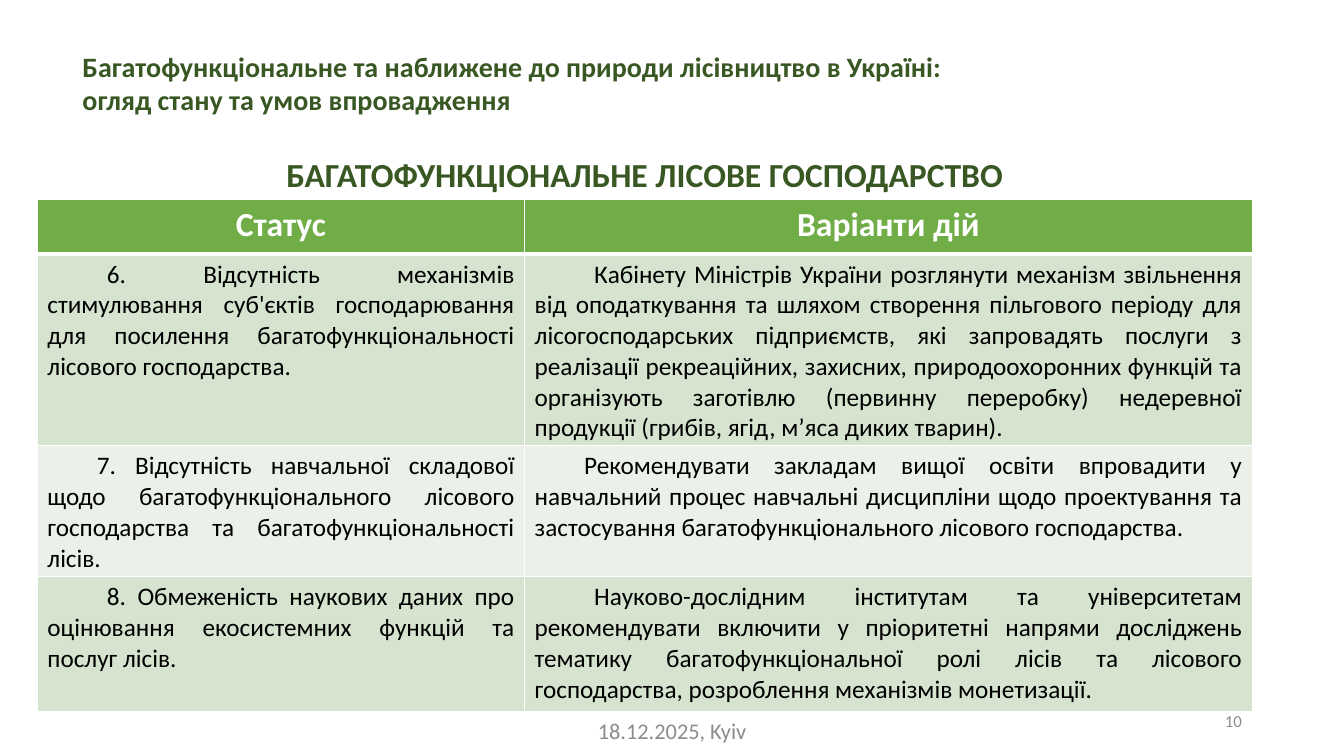
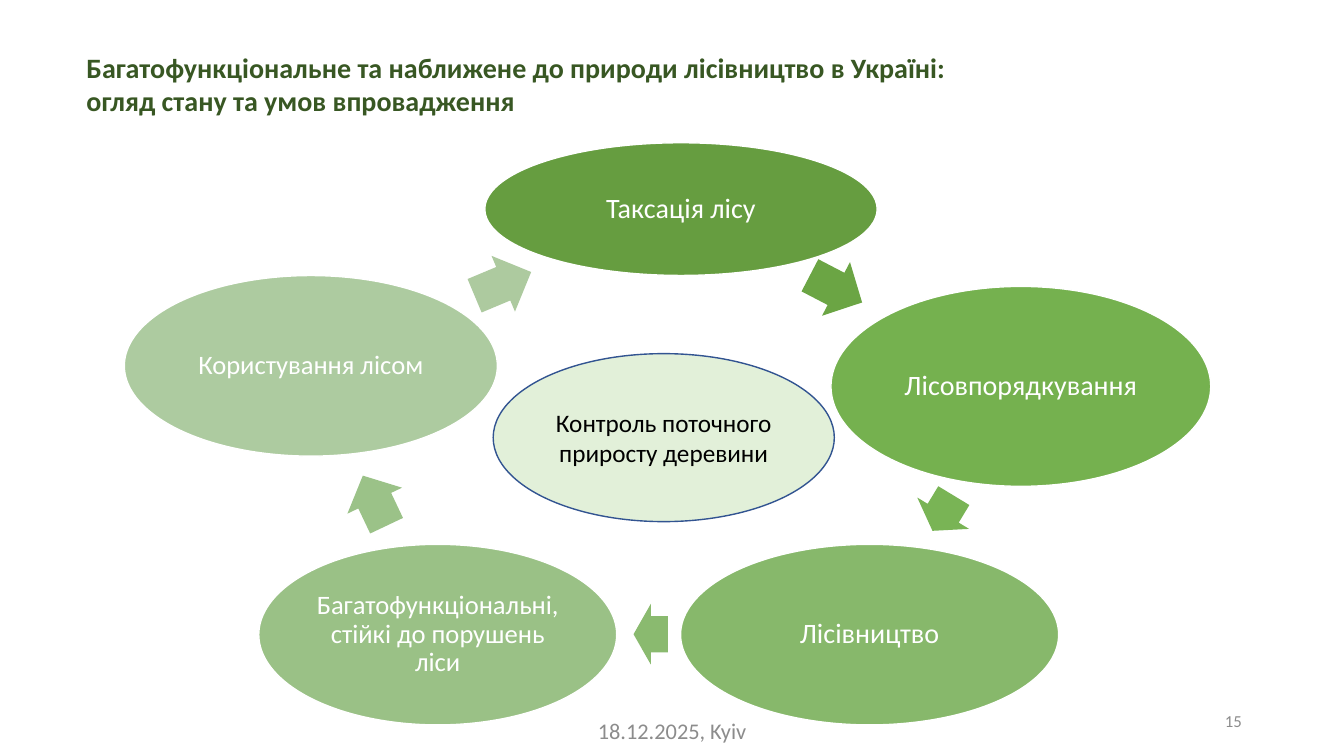
from lxml import etree
from pptx import Presentation
from pptx import util as u
from pptx.dml.color import RGBColor
from pptx.enum import shapes, text
from pptx.oxml import ns

FOREST = RGBColor(0x38, 0x57, 0x23)
LEAF = RGBColor(0x70, 0xAD, 0x47)
BAND_DARK = RGBColor(0xD5, 0xE3, 0xCF)
BAND_LIGHT = RGBColor(0xEB, 0xF1, 0xE9)
PALE = RGBColor(0xE2, 0xF0, 0xD9)
NAVY = RGBColor(0x32, 0x54, 0x91)
GREY = RGBColor(0x8C, 0x8C, 0x8C)
WHITE = RGBColor(0xFF, 0xFF, 0xFF)
BLACK = RGBColor(0, 0, 0)

SURVEY, SURVEY_ARROW = RGBColor(0x66, 0x9D, 0x40), RGBColor(0x6B, 0xA5, 0x44)
PLANNING, PLANNING_ARROW = RGBColor(0x75, 0xB1, 0x4F), RGBColor(0x79, 0xB4, 0x55)
FORESTRY, FORESTRY_ARROW = RGBColor(0x87, 0xB8, 0x6B), RGBColor(0x8A, 0xBA, 0x6F)
RESILIENT, RESILIENT_ARROW = RGBColor(0x9A, 0xC1, 0x86), RGBColor(0x9B, 0xC2, 0x88)
USE, USE_ARROW = RGBColor(0xAD, 0xCB, 0xA0), RGBColor(0xAD, 0xCA, 0x9F)

COLUMNS, ROWS = 160, 90
LEFT, CENTER = text.PP_ALIGN.LEFT, text.PP_ALIGN.CENTER
RIGHT, JUSTIFY = text.PP_ALIGN.RIGHT, text.PP_ALIGN.JUSTIFY
MIDDLE, TOP = text.MSO_ANCHOR.MIDDLE, text.MSO_ANCHOR.TOP

deck = Presentation()
deck.slide_width, deck.slide_height = u.Inches(13.33), u.Inches(7.5)


def grid(*lengths):
    cell = deck.slide_height / ROWS
    return [round(cell * length) for length in lengths]


def write(frame, words, size=18, color=BLACK, bold=False, align=LEFT,
          anchor=TOP, indent=0, spacing=None, inset=None):
    frame.word_wrap = True
    frame.vertical_anchor = anchor
    if inset is not None:
        frame.margin_left = frame.margin_right = u.Inches(inset)
        frame.margin_top = frame.margin_bottom = u.Inches(inset)
    paragraph = frame.paragraphs[0]
    paragraph.alignment = align
    paragraph.line_spacing = spacing
    if indent:
        paragraph._p.get_or_add_pPr().set("indent", str(u.Inches(indent)))
    run = paragraph.add_run()
    run.text = words
    run.font.name = "Calibri"
    run.font.size = u.Pt(size)
    run.font.bold = bold
    run.font.color.rgb = color


slides = []
for number, title_left, title_top in (("10", 8.64, 5.28), ("15", 9.12, 5.4)):
    slide = deck.slides.add_slide(deck.slide_layouts[6])
    slides.append(slide)
    title = slide.shapes.add_textbox(*grid(title_left, title_top, 111.12, 9.24))
    write(title.text_frame,
          "Багатофункціональне та наближене до природи лісівництво в Україні: "
          "огляд стану та умов впровадження",
          size=20, color=FOREST, bold=True)
    page = slide.shapes.add_textbox(*grid(113, 83.4, 36, 4.8))
    write(page.text_frame, number, size=12, color=GREY, align=RIGHT, anchor=MIDDLE)
    occasion = slide.shapes.add_textbox(*grid(53, 83.4, 54, 7.2))
    write(occasion.text_frame, "18.12.2025, Kyiv",
          size=16, color=GREY, align=CENTER, anchor=MIDDLE)

options_slide, cycle_slide = slides

heading = options_slide.shapes.add_textbox(*grid(5.28, 17.76, 142.92, 6))
write(heading.text_frame, "БАГАТОФУНКЦІОНАЛЬНЕ ЛІСОВЕ ГОСПОДАРСТВО",
      size=24, color=FOREST, bold=True, align=CENTER)

head = dict(size=24, color=WHITE, bold=True, align=CENTER)
wide = dict(align=JUSTIFY, indent=0.59)
narrow = dict(align=JUSTIFY, indent=0.49)
options = [
    (6.5, LEAF, head, "Статус", "Варіанти дій"),
    (22.7, BAND_DARK, wide,
     "6. Відсутність механізмів стимулювання суб'єктів господарювання для "
     "посилення багатофункціональності лісового господарства.",
     "Кабінету Міністрів України розглянути механізм звільнення від "
     "оподаткування та шляхом створення пільгового періоду для "
     "лісогосподарських підприємств, які запровадять послуги з реалізації "
     "рекреаційних, захисних, природоохоронних функцій та організують "
     "заготівлю (первинну переробку) недеревної продукції (грибів, ягід, "
     "м’яса диких тварин)."),
    (15.6, BAND_LIGHT, narrow,
     "7. Відсутність навчальної складової щодо багатофункціонального лісового "
     "господарства та багатофункціональності лісів.",
     "Рекомендувати закладам вищої освіти впровадити у навчальний процес "
     "навчальні дисципліни щодо проектування та застосування "
     "багатофункціонального лісового господарства."),
    (16.1, BAND_DARK, wide,
     "8. Обмеженість наукових даних про оцінювання екосистемних функцій та "
     "послуг лісів.",
     "Науково-дослідним інститутам та університетам рекомендувати включити у "
     "пріоритетні напрями досліджень тематику багатофункціональної ролі лісів "
     "та лісового господарства, розроблення механізмів монетизації."),
]
table = options_slide.shapes.add_table(
    len(options), 2, *grid(4.44, 23.76, 144.6, 60.9)).table
for column, width in zip(table.columns, grid(58, 86.6)):
    column.width = width
for row_index, (height, band, style, *entries) in enumerate(options):
    table.rows[row_index].height = grid(height)[0]
    for column_index, entry in enumerate(entries):
        cell = table.cell(row_index, column_index)
        for side in "LRTB":
            thick = (row_index, side) in ((0, "B"), (1, "T"))
            border = etree.SubElement(cell._tc.get_or_add_tcPr(), ns.qn("a:ln" + side),
                                      w=str(u.Pt(3 if thick else 1)))
            paint = etree.SubElement(border, ns.qn("a:solidFill"))
            etree.SubElement(paint, ns.qn("a:srgbClr"), val=str(WHITE))
        cell.fill.solid()
        cell.fill.fore_color.rgb = band
        write(cell.text_frame, entry, **style)

ELLIPSE, ARROW = shapes.MSO_SHAPE.OVAL, shapes.MSO_SHAPE.RIGHT_ARROW
stage = dict(color=WHITE, align=CENTER, anchor=MIDDLE, spacing=0.9, inset=0.03)
large, small = dict(stage, size=20), dict(stage, size=19)
core = dict(align=CENTER, anchor=MIDDLE)
stages = [
    ("Таксація лісу", (57.7, 17, 46.7, 15.8), SURVEY, WHITE, large),
    ("Лісовпорядкування", (98.9, 34.1, 45.2, 23.8), PLANNING, WHITE, large),
    ("Лісівництво", (81, 64.8, 45, 21.5), FORESTRY, WHITE, large),
    ("Багатофункціональні, стійкі до порушень ліси",
     (30.8, 64.8, 42.6, 21.5), RESILIENT, WHITE, small),
    ("Користування лісом", (14.8, 32.8, 44.4, 21.5), USE, WHITE, small),
    ("Контроль поточного приросту деревини",
     (58.7, 42.1, 40.6, 20), PALE, NAVY, core),
]
for words, area, fill, outline, style in stages:
    ellipse = cycle_slide.shapes.add_shape(ELLIPSE, *grid(*area))
    ellipse.shadow.inherit = False
    ellipse.fill.solid()
    ellipse.fill.fore_color.rgb = fill
    ellipse.line.color.rgb = outline
    ellipse.line.width = u.Pt(1)
    write(ellipse.text_frame, words, **style)

transitions = [
    (96, 30.8, 7, 27.5, SURVEY_ARROW),
    (109.8, 57.5, 4.9, 121.2, PLANNING_ARROW),
    (75.4, 71.9, 4.1, 180, FORESTRY_ARROW),
    (41.3, 56, 6.6, 244.6, RESILIENT_ARROW),
    (56.2, 30.2, 7.3, 337.2, USE_ARROW),
]
for left, top, length, turn, fill in transitions:
    arrow = cycle_slide.shapes.add_shape(ARROW, *grid(left, top, length, 7.2))
    arrow.shadow.inherit = False
    arrow.adjustments[0], arrow.adjustments[1] = 0.6, 0.5
    arrow.rotation = turn
    arrow.fill.solid()
    arrow.fill.fore_color.rgb = fill
    arrow.line.fill.background()

deck.save("out.pptx")
